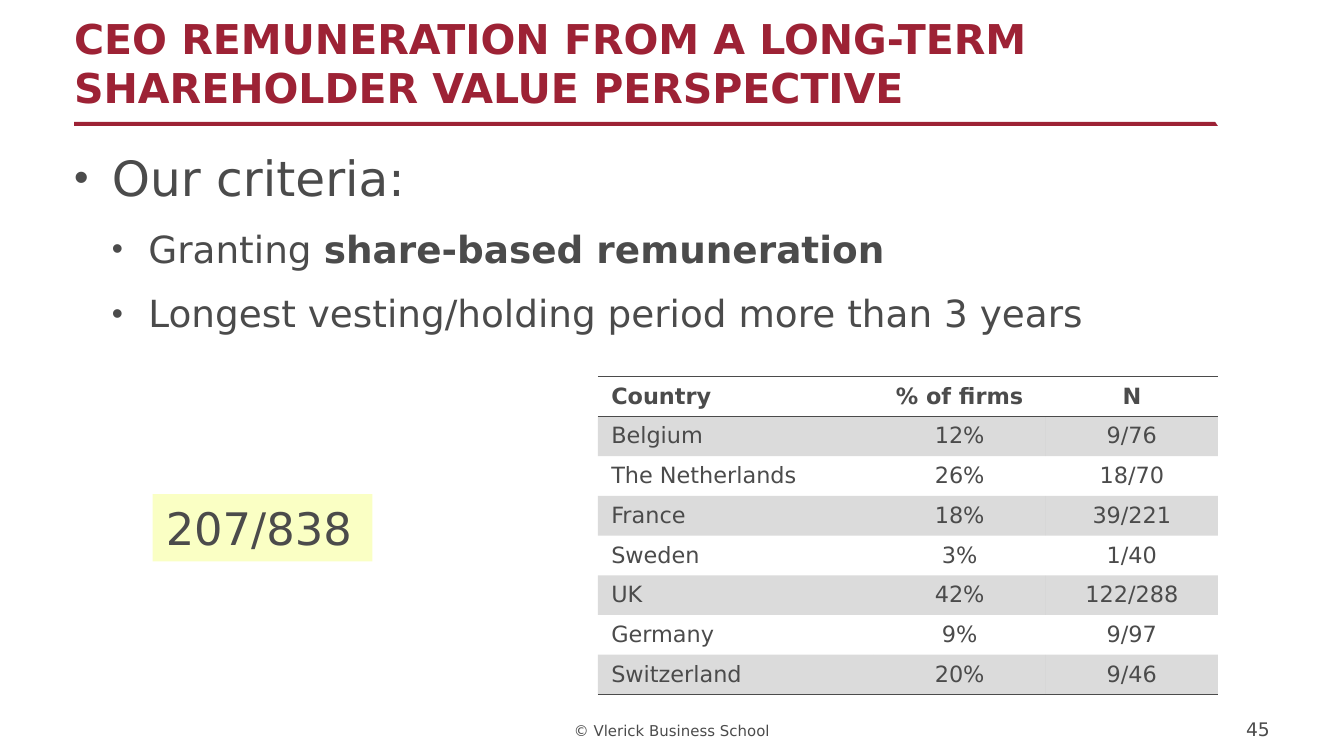
from typing import NamedTuple

from lxml.etree import SubElement
from pptx import Presentation
from pptx.dml.color import RGBColor
from pptx.enum.text import MSO_ANCHOR as Anchor, MSO_AUTO_SIZE as AutoSize, PP_ALIGN as Align
from pptx.enum.shapes import MSO_SHAPE as Preset
from pptx.oxml.ns import qn
from pptx.util import Pt

PX = 9525
FONT = "DejaVu Sans"
COLORS = {"text": "4B4B4B", "accent": "9D2235", "highlight": "FAFFC4"}
PLAIN_TABLE = "{2D5ABB26-0587-4C30-8999-92F81FD0307C}"


class Box(NamedTuple):
    left: int
    top: int
    width: int
    height: int

    def emu(self) -> list[int]:
        return [side * PX for side in self]


class Bullet(NamedTuple):
    level: int
    margin: int
    hanging: int
    space: float
    size: int
    phrases: tuple[tuple[str, bool], ...]


class Country(NamedTuple):
    name: str
    share: str
    firms: str


CRITERIA = [
    Bullet(0, 27, 27, 0, 26, (("Our criteria:", False),)),
    Bullet(1, 53, 26, 10.5, 20, (("Granting ", False), ("share-based remuneration", True))),
    Bullet(1, 53, 26, 10.5, 20, (("Longest vesting/holding period more than 3 years", False),)),
]
COUNTRIES = [
    Country("Country", "% of firms", "N"),
    Country("Belgium", "12%", "9/76"),
    Country("The Netherlands", "26%", "18/70"),
    Country("France", "18%", "39/221"),
    Country("Sweden", "3%", "1/40"),
    Country("UK", "42%", "122/288"),
    Country("Germany", "9%", "9/97"),
    Country("Switzerland", "20%", "9/46"),
]


def rgb(name: str) -> RGBColor:
    return RGBColor.from_string(COLORS[name])


def style(paragraph, size: int, color: str = "text", bold: bool = False, align=Align.LEFT) -> None:
    paragraph.alignment = align
    font = paragraph.font
    font.name, font.size, font.bold = FONT, Pt(size), bold
    font.color.rgb = rgb(color)


def frame(shape, anchor, bottom: int = 0):
    content = shape.text_frame
    content.word_wrap = True
    content.auto_size = AutoSize.NONE
    content.vertical_anchor = anchor
    content.margin_left = content.margin_top = content.margin_right = 0
    content.margin_bottom = bottom * PX
    return content


def place(shape, box: Box) -> None:
    shape.left, shape.top, shape.width, shape.height = box.emu()


def draw_title(slide, box: Box, wording: str) -> None:
    title = slide.shapes.title
    place(title, box)
    content = frame(title, Anchor.BOTTOM)
    content.text = wording
    style(content.paragraphs[0], 22, "accent", True)


def draw_criteria(slide, box: Box) -> None:
    body = slide.placeholders[1]
    place(body, box)
    content = frame(body, Anchor.TOP)
    for index, bullet in enumerate(CRITERIA):
        line = content.add_paragraph() if index else content.paragraphs[0]
        line.level = bullet.level
        line.space_before = Pt(bullet.space)
        properties = line._p.get_or_add_pPr()
        properties.set("marL", str(bullet.margin * PX))
        properties.set("indent", str(-bullet.hanging * PX))
        SubElement(properties, qn("a:buSzPct"), val="85000")
        SubElement(properties, qn("a:buFont"), typeface="Arial")
        SubElement(properties, qn("a:buChar"), char="•")
        style(line, bullet.size)
        for wording, bold in bullet.phrases:
            run = line.add_run()
            run.text = wording
            if bold:
                run.font.bold = True


def draw_rule(slide) -> None:
    builder = slide.shapes.build_freeform(53, 87, scale=PX)
    builder.add_line_segments([(868, 87), (870, 90), (53, 90)], close=True)
    rule = builder.convert_to_shape()
    rule.shadow.inherit = False
    rule.fill.solid()
    rule.fill.fore_color.rgb = rgb("accent")
    rule.line.fill.background()


def add_border(cell, side: str) -> None:
    border = SubElement(cell._tc.get_or_add_tcPr(), qn(f"a:{side}"), w=str(Pt(1)))
    fill = SubElement(border, qn("a:solidFill"))
    SubElement(fill, qn("a:srgbClr"), val=COLORS["text"])


def fill_band(cell) -> None:
    cell.fill.solid()
    cell.fill.fore_color.rgb = rgb("text")
    tint = cell._tc.tcPr.find(qn("a:solidFill")).find(qn("a:srgbClr"))
    SubElement(tint, qn("a:alpha"), val="20000")


def draw_countries(slide, box: Box, widths: tuple[int, ...]) -> None:
    table = slide.shapes.add_table(len(COUNTRIES), len(widths), *box.emu()).table
    table.first_row = table.horz_banding = False
    table._tbl.tblPr.find(qn("a:tableStyleId")).text = PLAIN_TABLE
    for column, width in zip(table.columns, widths):
        column.width = width * PX
    last = len(COUNTRIES) - 1
    for row, country in enumerate(COUNTRIES):
        table.rows[row].height = 26 * PX
        for column, wording in enumerate(country):
            cell = table.cell(row, column)
            cell.text = wording
            style(cell.text_frame.paragraphs[0], 12, bold=row == 0,
                  align=Align.CENTER if column else Align.LEFT)
            if row == 0:
                add_border(cell, "lnT")
            if row in (0, last):
                add_border(cell, "lnB")
            if row % 2:
                fill_band(cell)
            else:
                cell.fill.background()


def draw_total(slide, box: Box, wording: str) -> None:
    total = slide.shapes.add_shape(Preset.RECTANGLE, *box.emu())
    total.shadow.inherit = False
    total.fill.solid()
    total.fill.fore_color.rgb = rgb("highlight")
    total.line.fill.background()
    content = total.text_frame
    content.word_wrap = False
    content.auto_size = AutoSize.SHAPE_TO_FIT_TEXT
    content.vertical_anchor = Anchor.TOP
    content.text = wording
    style(content.paragraphs[0], 24)


def draw_footer(slide, box: Box, wording: str, size: int, align, bottom: int = 0) -> None:
    content = frame(slide.shapes.add_textbox(*box.emu()), Anchor.BOTTOM, bottom)
    content.text = wording
    style(content.paragraphs[0], size, align=align)


def main() -> None:
    deck = Presentation()
    deck.slide_width, deck.slide_height = 960 * PX, 540 * PX
    slide = deck.slides.add_slide(deck.slide_layouts[1])
    draw_footer(slide, Box(378, 514, 204, 15), "© Vlerick Business School", 8, Align.CENTER, 1)
    draw_rule(slide)
    draw_title(slide, Box(53, 0, 794, 80), "CEO REMUNERATION FROM A LONG-TERM SHAREHOLDER VALUE PERSPECTIVE")
    draw_criteria(slide, Box(53, 106, 854, 195))
    draw_countries(slide, Box(427, 269, 443, 208), (197, 123, 123))
    draw_footer(slide, Box(854, 514, 53, 15), "45", 10, Align.RIGHT)
    draw_total(slide, Box(109, 353, 157, 48), "207/838")
    deck.save("out.pptx")


if __name__ == "__main__":
    main()
